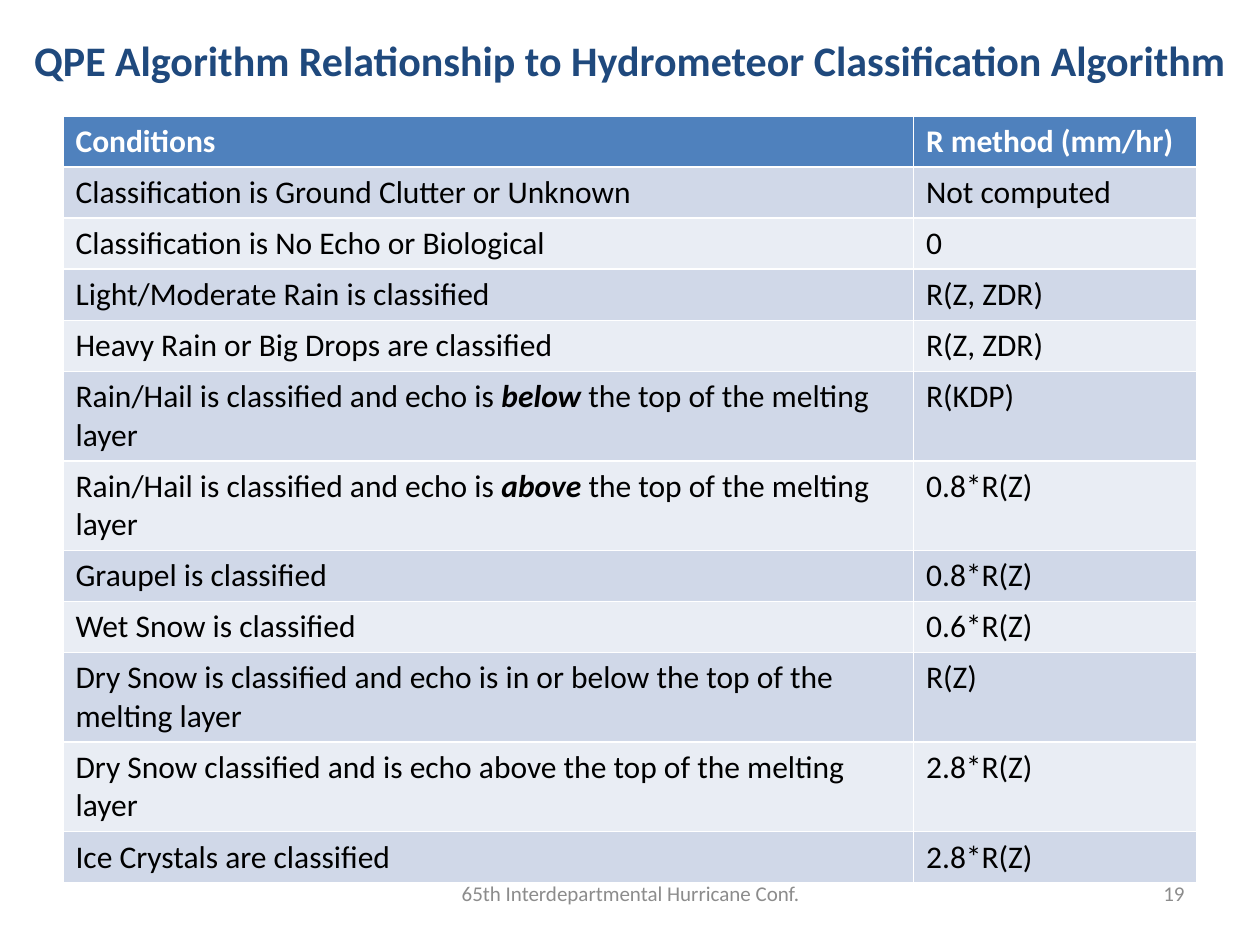
import pptx
import pptx.util
import pptx.dml.color
import pptx.enum.text

Inches = pptx.util.Inches
ALIGN = pptx.enum.text.PP_ALIGN
FONT = "Calibri"
NAVY, BLUE, GREY = "1F497D", "4F81BD", "8C8C8C"
WHITE, BLACK = "FFFFFF", "000000"
BANDS = ("D0D8E8", "E9EDF4")
ROW_HEIGHT = 0.4
COLUMN_WIDTHS = (6.75, 2.25)

HEADINGS = ("Conditions", "R method (mm/hr)")
RULES = [
    (("Classification is Ground Clutter or Unknown",), "Not computed"),
    (("Classification is No Echo or Biological",), "0"),
    (("Light/Moderate Rain is classified",), "R(Z, ZDR)"),
    (("Heavy Rain or Big Drops are classified",), "R(Z, ZDR)"),
    (("Rain/Hail is classified and echo is ", "below", " the top of the melting layer"), "R(KDP)"),
    (("Rain/Hail is classified and echo is ", "above", " the top of the melting layer"), "0.8*R(Z)"),
    (("Graupel is classified",), "0.8*R(Z)"),
    (("Wet Snow is classified",), "0.6*R(Z)"),
    (("Dry Snow is classified and echo is in or below the top of the melting layer",), "R(Z)"),
    (("Dry Snow classified and is echo above the top of the melting layer",), "2.8*R(Z)"),
    (("Ice Crystals are classified",), "2.8*R(Z)"),
]


def color(hex_value):
    return pptx.dml.color.RGBColor.from_string(hex_value)


def add_run(paragraph, text, size, hex_value, bold=False, italic=False):
    run = paragraph.add_run()
    run.text = text
    run.font.name = FONT
    run.font.size = pptx.util.Pt(size)
    run.font.color.rgb = color(hex_value)
    run.font.bold = bold
    run.font.italic = italic


def set_line(holder, text, size, hex_value, align, bold=False):
    frame = holder.text_frame
    frame.word_wrap = True
    frame.auto_size = pptx.enum.text.MSO_AUTO_SIZE.NONE
    frame.vertical_anchor = pptx.enum.text.MSO_ANCHOR.MIDDLE
    paragraph = frame.paragraphs[0]
    paragraph.alignment = align
    add_run(paragraph, text, size, hex_value, bold)


def add_title(slide, text):
    title = slide.shapes.title
    title.left, title.top = Inches(0), Inches(0.18)
    title.width, title.height = Inches(10), Inches(0.59)
    set_line(title, text, 24, NAVY, ALIGN.CENTER, bold=True)


def add_footer(slide, left, width, text, align):
    footer = slide.shapes.add_textbox(Inches(left), Inches(6.83), Inches(width), Inches(0.52))
    set_line(footer, text, 12, GREY, align)


def fill_cell(cell, parts, fill, hex_value, bold=False):
    cell.fill.solid()
    cell.fill.fore_color.rgb = color(fill)
    for position, part in enumerate(parts):
        emphasis = position == 1
        add_run(cell.text_frame.paragraphs[0], part, 18, hex_value, bold or emphasis, emphasis)


def add_rules_table(slide):
    row_count = len(RULES) + 1
    table = slide.shapes.add_table(
        row_count, len(HEADINGS), Inches(0.5), Inches(0.92),
        Inches(sum(COLUMN_WIDTHS)), Inches(ROW_HEIGHT * row_count)).table
    for column, width in zip(table.columns, COLUMN_WIDTHS):
        column.width = Inches(width)
    for column, heading in enumerate(HEADINGS):
        fill_cell(table.cell(0, column), (heading,), BLUE, WHITE, bold=True)
    for index, (condition, method) in enumerate(RULES):
        band = BANDS[index % 2]
        fill_cell(table.cell(index + 1, 0), condition, band, BLACK)
        fill_cell(table.cell(index + 1, 1), (method,), band, BLACK)


def main():
    deck = pptx.Presentation()
    deck.slide_width, deck.slide_height = Inches(10), Inches(7.5)
    slide = deck.slides.add_slide(deck.slide_layouts[5])
    add_rules_table(slide)
    add_footer(slide, 3.42, 3.17, "65th Interdepartmental Hurricane Conf.", ALIGN.CENTER)
    add_footer(slide, 7.17, 2.33, "19", ALIGN.RIGHT)
    add_title(slide, "QPE Algorithm Relationship to Hydrometeor Classification Algorithm")
    deck.save("out.pptx")


if __name__ == "__main__":
    main()
